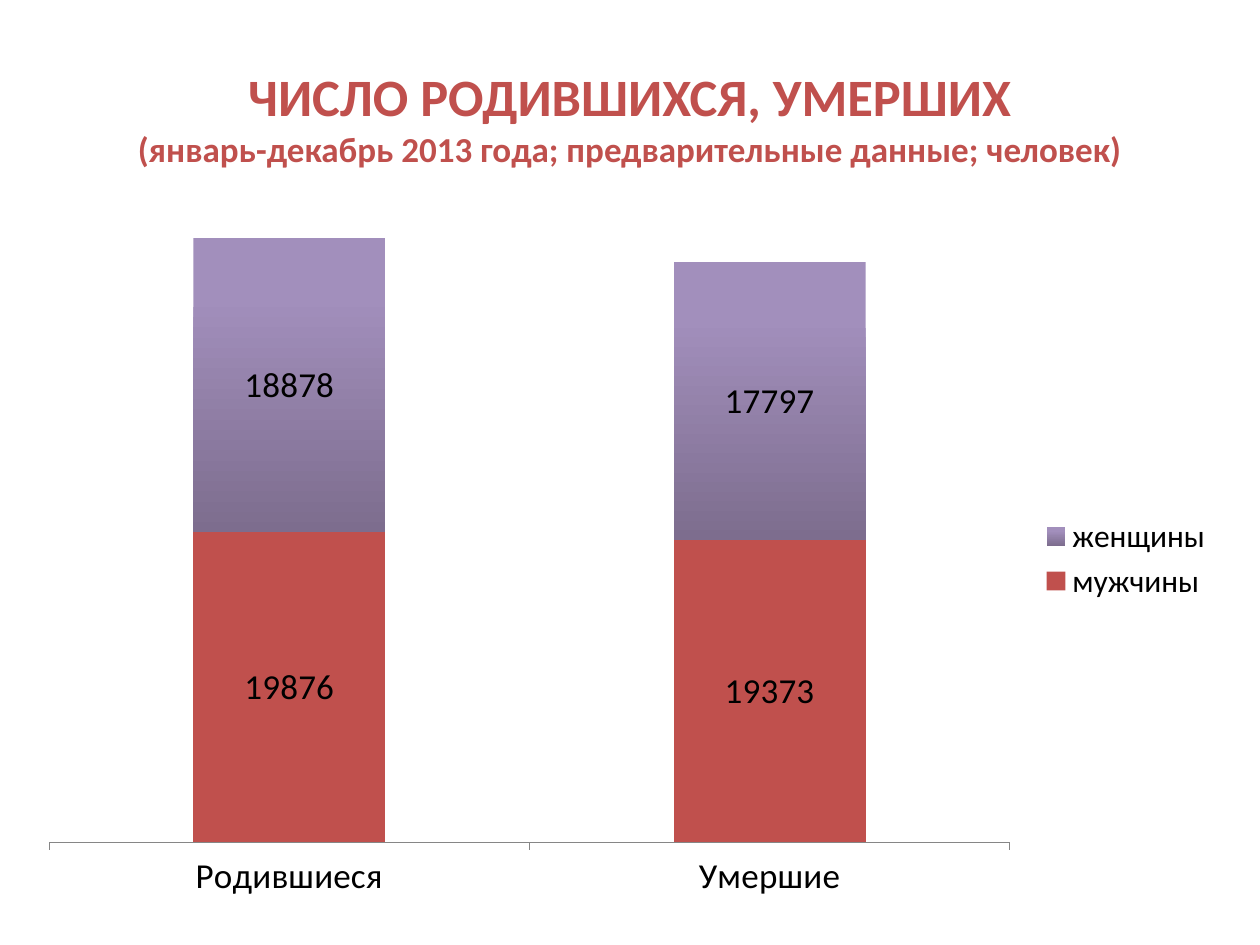
from lxml import etree
from pptx import Presentation
from pptx.chart.data import CategoryChartData
from pptx.dml.color import RGBColor
from pptx.enum.chart import XL_CHART_TYPE, XL_LABEL_POSITION, XL_LEGEND_POSITION, XL_TICK_LABEL_POSITION, XL_TICK_MARK
from pptx.enum.text import MSO_ANCHOR, PP_ALIGN
from pptx.oxml.ns import qn
from pptx.util import Inches, Pt

STACKED = XL_CHART_TYPE.COLUMN_STACKED
LABEL_CENTER = XL_LABEL_POSITION.CENTER
LEGEND_RIGHT = XL_LEGEND_POSITION.RIGHT
NO_LABELS = XL_TICK_LABEL_POSITION.NONE
TICK_NONE = XL_TICK_MARK.NONE
TICK_OUTSIDE = XL_TICK_MARK.OUTSIDE
MIDDLE = MSO_ANCHOR.MIDDLE
CENTER = PP_ALIGN.CENTER

FONT = "Calibri"
COLORS = {
    "red": "C0504D",
    "light_purple": "A28FBC",
    "dark_purple": "7D6D8E",
    "text": "000000",
    "axis": "868686",
}
TITLE_LINES = [
    ("ЧИСЛО РОДИВШИХСЯ, УМЕРШИХ", 30),
    ("(январь-декабрь 2013 года; предварительные данные; человек)", 20),
]
CATEGORIES = ["Родившиеся", "Умершие"]
SERIES = [
    ("мужчины", [19876, 19373], [("red", 0)]),
    ("женщины", [18878, 17797], [("light_purple", 0.2), ("dark_purple", 1)]),
]
TITLE_BOX = (0.5, 0.3, 9, 1.25)
CHART_BOX = (0.2, 1.62, 9.53, 5.63)
PLOT_LAYOUT = {"x": 0.02, "y": 0.02, "w": 0.8, "h": 0.88}


def color(name):
    return RGBColor.from_string(COLORS[name])


def style_font(font, size, color_name, bold=False):
    font.name = FONT
    font.size = Pt(size)
    font.bold = bold
    font.color.rgb = color(color_name)


def add_title(slide):
    title = slide.shapes.title
    title.left, title.top, title.width, title.height = map(Inches, TITLE_BOX)
    title.text_frame.vertical_anchor = MIDDLE
    paragraph = title.text_frame.paragraphs[0]
    paragraph.alignment = CENTER
    for index, (text, size) in enumerate(TITLE_LINES):
        if index:
            paragraph.add_line_break()
        run = paragraph.add_run()
        run.text = text
        style_font(run.font, size, "red", bold=True)


def fill_series(fill, stops):
    if len(stops) == 1:
        fill.solid()
        fill.fore_color.rgb = color(stops[0][0])
        return
    fill.gradient()
    fill.gradient_angle = 270
    for gradient_stop, (name, position) in zip(fill.gradient_stops, stops):
        gradient_stop.color.rgb = color(name)
        gradient_stop.position = position


def set_plot_layout(chart):
    plot_area = chart.element.find(".//" + qn("c:plotArea"))
    layout = plot_area.find(qn("c:layout"))
    if layout is None:
        layout = etree.Element(qn("c:layout"))
        plot_area.insert(0, layout)
    manual = etree.SubElement(layout, qn("c:manualLayout"))
    settings = {"layoutTarget": "inner", "xMode": "edge", "yMode": "edge", **PLOT_LAYOUT}
    for tag, value in settings.items():
        etree.SubElement(manual, qn("c:" + tag)).set("val", str(value))


def add_chart(slide):
    data = CategoryChartData()
    data.categories = CATEGORIES
    for name, values, _ in SERIES:
        data.add_series(name, values)
    chart = slide.shapes.add_chart(STACKED, *map(Inches, CHART_BOX), data).chart
    style_font(chart.font, 18, "text")
    chart.has_title = False
    chart.has_legend = True
    chart.legend.position = LEGEND_RIGHT
    chart.legend.include_in_layout = False
    set_plot_layout(chart)

    category_axis = chart.category_axis
    category_axis.major_tick_mark = TICK_OUTSIDE
    category_axis.format.line.color.rgb = color("axis")
    style_font(category_axis.tick_labels.font, 20, "text")

    value_axis = chart.value_axis
    value_axis.minimum_scale = 0
    value_axis.maximum_scale = 40000
    value_axis.major_unit = 10000
    value_axis.has_major_gridlines = False
    value_axis.major_tick_mark = TICK_NONE
    value_axis.tick_label_position = NO_LABELS
    value_axis.format.line.fill.background()

    plot = chart.plots[0]
    plot.gap_width = 150
    plot.overlap = 100
    plot.vary_by_categories = False
    for series, (_, _, stops) in zip(plot.series, SERIES):
        fill_series(series.format.fill, stops)
        labels = series.data_labels
        labels.show_value = True
        labels.position = LABEL_CENTER
        style_font(labels.font, 20, "text")


def main():
    presentation = Presentation()
    presentation.slide_width = Inches(10)
    presentation.slide_height = Inches(7.5)
    slide = presentation.slides.add_slide(presentation.slide_layouts[5])
    add_title(slide)
    add_chart(slide)
    presentation.save("out.pptx")


if __name__ == "__main__":
    main()
